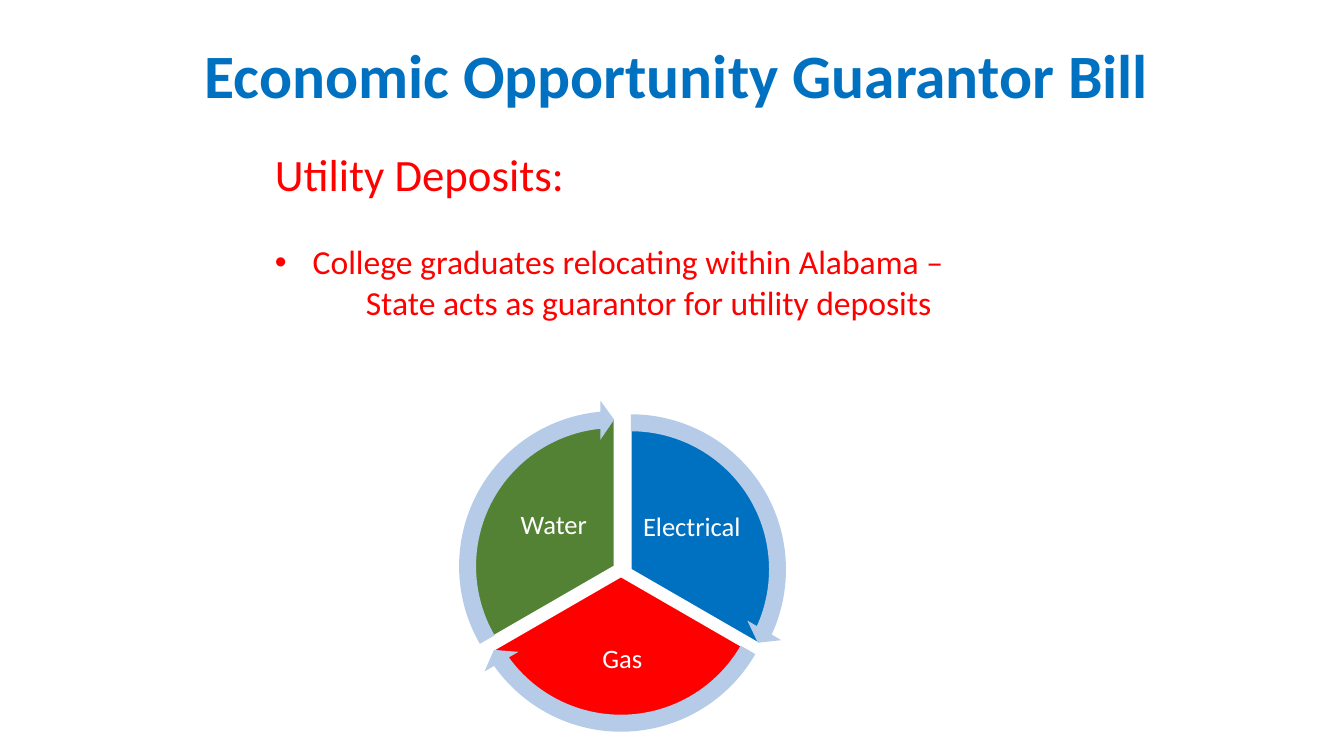
from lxml.etree import SubElement
from pptx import Presentation
from pptx.dml.color import RGBColor
from pptx.enum.shapes import MSO_SHAPE as Shape
from pptx.enum.text import MSO_ANCHOR as Anchor, MSO_AUTO_SIZE as AutoSize, PP_ALIGN as Align
from pptx.oxml.ns import qn
from pptx.util import Cm, Pt

BLUE = RGBColor(0x00, 0x70, 0xC0)
RED = RGBColor(0xFF, 0x00, 0x00)
GREEN = RGBColor(0x54, 0x82, 0x35)
PALE_BLUE = RGBColor(0xB5, 0xCB, 0xE7)
WHITE = RGBColor(0xFF, 0xFF, 0xFF)

PIE_SIZE = 7.47
ARROW_SIZE = 8.38
ARROW_HEAD_ANGLE = 5.46

# label, colour, start and end in degrees, centre, label box (cm)
SECTORS = [
    ("Electrical", BLUE, 270, 30, (15.9, 14.35), (16.1, 12.19, 2.67, 2.24)),
    ("Gas", RED, 30, 150, (15.65, 14.53), (13.69, 15.65, 3.99, 1.96)),
    ("Water", GREEN, 150, 270, (15.48, 14.27), (12.62, 12.12, 2.67, 2.24)),
]


def angle(degrees):
    """Convert degrees to the unit of a shape adjustment."""
    return degrees * 0.6


class SlideBuilder:
    font_name = "Calibri"

    def __init__(self, slide):
        self.slide = slide

    def text_box(self, box, **frame_format):
        frame = self.slide.shapes.add_textbox(*map(Cm, box)).text_frame
        frame.word_wrap = True
        for name, value in frame_format.items():
            setattr(frame, name, value)
        return frame

    def fill_paragraph(self, paragraph, text, size, color, bold=False, **paragraph_format):
        """Put one styled run of text into the paragraph."""
        run = paragraph.add_run()
        run.text = text
        font_format = {"name": self.font_name, "size": Pt(size), "bold": bold}
        for name, value in font_format.items():
            setattr(run.font, name, value)
        run.font.color.rgb = color
        for name, value in paragraph_format.items():
            setattr(paragraph, name, value)

    def indent(self, paragraph, left, bullet=None):
        """Set the left indent in cm; a bullet hangs at the margin."""
        properties = paragraph._p.get_or_add_pPr()
        properties.set("marL", str(Cm(left)))
        if bullet:
            properties.set("indent", str(-Cm(left)))
            SubElement(properties, qn("a:buFont")).set("typeface", "Arial")
            SubElement(properties, qn("a:buChar")).set("char", bullet)

    def round_shape(self, kind, centre, size, color, adjustments):
        left, top = (Cm(middle - size / 2) for middle in centre)
        shape = self.slide.shapes.add_shape(kind, left, top, Cm(size), Cm(size))
        shape.shadow.inherit = False
        shape.fill.solid()
        shape.fill.fore_color.rgb = color
        for index, value in enumerate(adjustments):
            shape.adjustments[index] = value
        return shape

    def pie(self, centre, color, start, end):
        shape = self.round_shape(Shape.PIE, centre, PIE_SIZE, color,
                                 (angle(start), angle(end)))
        shape.line.color.rgb = WHITE
        shape.line.width = Pt(1)

    def label(self, box, text):
        margins = dict.fromkeys(
            ("margin_left", "margin_top", "margin_right", "margin_bottom"), Cm(0.08))
        frame = self.text_box(box, vertical_anchor=Anchor.MIDDLE, **margins)
        self.fill_paragraph(frame.paragraphs[0], text, 19, WHITE,
                            alignment=Align.CENTER, line_spacing=0.9)

    def arrow(self, centre, start, end):
        shape = self.round_shape(
            Shape.CIRCULAR_ARROW, centre, ARROW_SIZE, PALE_BLUE,
            (0.051, angle(ARROW_HEAD_ANGLE), angle(end - ARROW_HEAD_ANGLE),
             angle(start), 0.059))
        shape.line.fill.background()


def main():
    presentation = Presentation()
    presentation.slide_width, presentation.slide_height = Cm(33.87), Cm(19.05)
    builder = SlideBuilder(presentation.slides.add_slide(presentation.slide_layouts[6]))

    title = builder.text_box((4.9, 0.81, 25.48, 2.13), auto_size=AutoSize.SHAPE_TO_FIT_TEXT)
    builder.fill_paragraph(title.paragraphs[0], "Economic Opportunity Guarantor Bill",
                           44, BLUE, bold=True)

    for text, color, start, end, centre, box in SECTORS:
        builder.pie(centre, color, start, end)
        builder.label(box, text)
    for _, _, start, end, centre, _ in SECTORS:
        builder.arrow(centre, start, end)

    body = builder.text_box((6.68, 3.58, 20.14, 5.74), auto_size=AutoSize.SHAPE_TO_FIT_TEXT)
    builder.fill_paragraph(body.paragraphs[0], "Utility Deposits:", 32, RED, space_after=Pt(29))
    bullet = body.add_paragraph()
    builder.fill_paragraph(bullet, "College graduates relocating within Alabama –", 24, RED)
    builder.indent(bullet, 0.95, "•")
    detail = body.add_paragraph()
    builder.fill_paragraph(detail, "State acts as guarantor for utility deposits", 24, RED)
    builder.indent(detail, 2.29)

    presentation.save("out.pptx")


if __name__ == "__main__":
    main()
